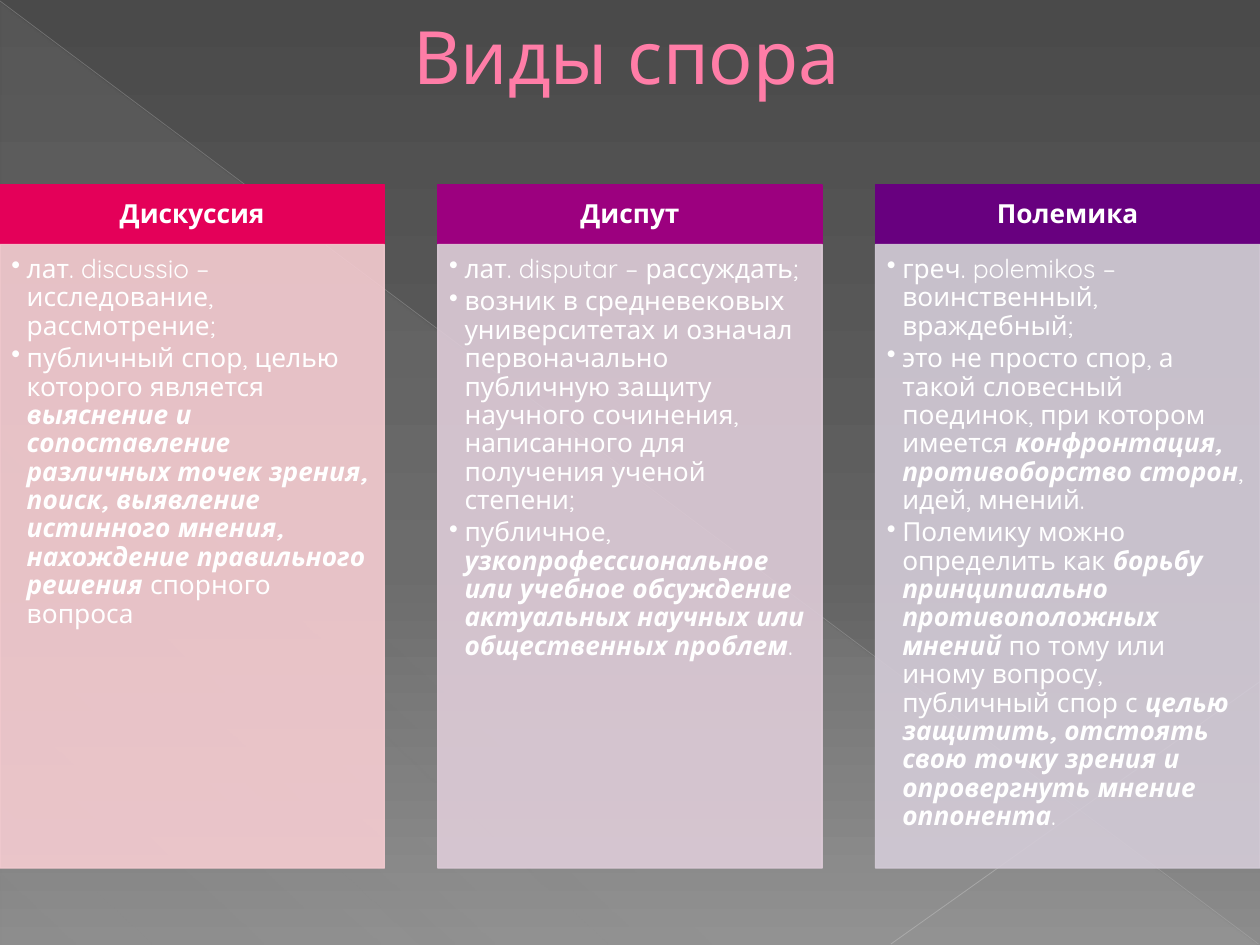
from lxml.etree import SubElement
from pptx import Presentation
from pptx.dml.color import RGBColor
from pptx.enum.shapes import MSO_CONNECTOR, MSO_SHAPE
from pptx.enum.text import MSO_ANCHOR, MSO_AUTO_SIZE, PP_ALIGN
from pptx.oxml.ns import qn
from pptx.util import Cm, Pt

WHITE = RGBColor(0xFF, 0xFF, 0xFF)
PINK = RGBColor(0xFF, 0x7D, 0xA7)
PINK_EDGE = RGBColor(0xB1, 0x27, 0x61)
BG_TOP = RGBColor(0x4A, 0x4A, 0x4A)
BG_MIDDLE = RGBColor(0x62, 0x62, 0x62)
BG_BOTTOM = RGBColor(0x8C, 0x8C, 0x8C)
SHEEN = RGBColor(0xD2, 0xD2, 0xD2)
LONG_RAY = RGBColor(0xBF, 0xBF, 0xBF)
SHORT_RAY = RGBColor(0xC6, 0xC6, 0xC6)
RED = RGBColor(0xE4, 0x00, 0x59)
MAGENTA = RGBColor(0x9C, 0x00, 0x7F)
PURPLE = RGBColor(0x68, 0x00, 0x7F)
PALE_RED = RGBColor(0xF5, 0xCC, 0xD1)
PALE_MAGENTA = RGBColor(0xDE, 0xCC, 0xD8)
PALE_PURPLE = RGBColor(0xD4, 0xCC, 0xD8)

WIDTH, HEIGHT = 25.4, 19.05
COLUMN_WIDTH = 7.75
HEAD_TOP, HEAD_HEIGHT, BODY_HEIGHT = 3.73, 1.2, 12.57

COLUMNS = [
    ("Дискуссия", RED, PALE_RED, [
        [("лат. discussio – исследование, рассмотрение;", False)],
        [("публичный спор, целью которого является ", False),
         ("выяснение и сопоставление различных точек зрения, поиск, выявление "
          "истинного мнения, нахождение правильного решения", True),
         (" спорного вопроса", False)],
    ]),
    ("Диспут", MAGENTA, PALE_MAGENTA, [
        [("лат. disputar – рассуждать;", False)],
        [("возник в средневековых университетах и означал первоначально публичную "
          "защиту научного сочинения, написанного для получения ученой степени;", False)],
        [("публичное, ", False),
         ("узкопрофессиональное или учебное обсуждение актуальных научных или "
          "общественных проблем", True),
         (".", False)],
    ]),
    ("Полемика", PURPLE, PALE_PURPLE, [
        [("греч. polemikos – воинственный, враждебный;", False)],
        [("это не просто спор, а такой словесный поединок, при котором имеется ", False),
         ("конфронтация, противоборство сторон", True),
         (", идей, мнений.", False)],
        [("Полемику можно определить как ", False),
         ("борьбу принципиально противоположных мнений", True),
         (" по тому или иному вопросу, публичный спор с ", False),
         ("целью защитить, отстоять свою точку зрения и опровергнуть мнение "
          "оппонента", True),
         (".", False)],
    ]),
]


class SlideBuilder:
    """Draws styled elements on the current slide."""

    font = "Quicksand"
    text_size = 15

    def __init__(self, slide):
        self.s = slide

    def alpha(self, owner, percent):
        for color in owner.iter(qn("a:srgbClr")):
            SubElement(color, qn("a:alpha"), val=str(percent * 1000))

    def gradient(self, fill, owner, stops, angle):
        fill.gradient()
        grad = owner.find(".//" + qn("a:gradFill"))
        grad.clear()
        stop_list = SubElement(grad, qn("a:gsLst"))
        for pos, color, opacity in stops:
            gs = SubElement(stop_list, qn("a:gs"), pos=str(pos * 1000))
            SubElement(gs, qn("a:srgbClr"), val=str(color))
            self.alpha(gs, opacity)
        SubElement(grad, qn("a:lin"), ang=str(angle * 60000), scaled="0")

    def background(self, stops, angle):
        self.gradient(self.s.background.fill, self.s.element, stops, angle)

    def shape(self, kind, left, top, width, height):
        sp = self.s.shapes.add_shape(kind, Cm(left), Cm(top), Cm(width), Cm(height))
        sp.shadow.inherit = False
        return sp

    def sheen(self, stops, angle):
        sp = self.shape(MSO_SHAPE.RIGHT_TRIANGLE, 0.02, 0.05, 25.35, 19)
        self.gradient(sp.fill, sp.element, stops, angle)
        sp.line.fill.background()

    def ray(self, x1, y1, x2, y2, color, width, opacity):
        line = self.s.shapes.add_connector(
            MSO_CONNECTOR.STRAIGHT, Cm(x1), Cm(y1), Cm(x2), Cm(y2))
        line.line.color.rgb = color
        line.line.width = Pt(width)
        sp_pr = line.element.spPr
        self.alpha(sp_pr, opacity)
        SubElement(sp_pr, qn("a:effectLst"))

    def run(self, p, text, size, color, bold=False, italic=False):
        r = p.add_run()
        r.text = text
        r.font.name = self.font
        r.font.size = Pt(size)
        r.font.color.rgb = color
        r.font.bold = bold
        r.font.italic = italic
        return r

    def title(self, text):
        sp = self.s.shapes.title
        sp.left, sp.top, sp.width, sp.height = Cm(1.2), Cm(0), Cm(22.86), Cm(2.24)
        tf = sp.text_frame
        tf.auto_size = MSO_AUTO_SIZE.NONE
        tf.vertical_anchor = MSO_ANCHOR.MIDDLE
        p = tf.paragraphs[0]
        p.alignment = PP_ALIGN.CENTER
        r = self.run(p, text, 42, PINK)
        r_pr = r.font._element
        ln = SubElement(r_pr, qn("a:ln"), w=str(Pt(0.5)))
        SubElement(SubElement(ln, qn("a:solidFill")), qn("a:srgbClr"), val=str(PINK_EDGE))
        r_pr.insert(0, ln)

    def panel(self, left, top, height, color, opacity, margins, anchor):
        sp = self.shape(MSO_SHAPE.RECTANGLE, left, top, COLUMN_WIDTH, height)
        sp.fill.solid()
        sp.fill.fore_color.rgb = color
        sp.line.color.rgb = color
        sp.line.width = Pt(0.75)
        self.alpha(sp.element.spPr, opacity)
        tf = sp.text_frame
        tf.word_wrap = True
        tf.vertical_anchor = anchor
        tf.margin_left, tf.margin_top, tf.margin_right, tf.margin_bottom = map(Cm, margins)
        return tf

    def heading(self, left, text, color):
        tf = self.panel(left, HEAD_TOP, HEAD_HEIGHT, color, 100,
                        (0.3, 0.17, 0.3, 0.17), MSO_ANCHOR.MIDDLE)
        p = tf.paragraphs[0]
        p.alignment = PP_ALIGN.CENTER
        p.line_spacing = 0.9
        self.run(p, text, self.text_size, WHITE, bold=True)

    def bullets(self, left, items, color):
        tf = self.panel(left, HEAD_TOP + HEAD_HEIGHT, BODY_HEIGHT, color, 90,
                        (0.23, 0.23, 0.3, 0.33), MSO_ANCHOR.TOP)
        for i, item in enumerate(items):
            p = tf.add_paragraph() if i else tf.paragraphs[0]
            p.level = 1
            p.alignment = PP_ALIGN.LEFT
            p.line_spacing = 0.9
            p.space_after = Pt(2.25)
            p_pr = p._p.get_or_add_pPr()
            p_pr.set("marL", str(Cm(0.31)))
            p_pr.set("indent", str(Cm(-0.31)))
            SubElement(p_pr, qn("a:buChar"), char="•")
            for text, strong in item:
                self.run(p, text, self.text_size, WHITE, strong, strong)


def main():
    prs = Presentation()
    prs.slide_width, prs.slide_height = Cm(WIDTH), Cm(HEIGHT)
    builder = SlideBuilder(prs.slides.add_slide(prs.slide_layouts[5]))
    builder.background(
        [(0, BG_TOP, 100), (60, BG_MIDDLE, 100), (100, BG_BOTTOM, 100)], 90)
    builder.sheen([(0, SHEEN, 10), (70, SHEEN, 8), (100, SHEEN, 1)], 133)
    builder.ray(0, 0.02, 25.37, 19.03, LONG_RAY, 0.39, 35)
    builder.ray(WIDTH, 13.74, 17.96, 19.03, SHORT_RAY, 0.47, 45)
    builder.title("Виды спора")
    step = (WIDTH - COLUMN_WIDTH) / (len(COLUMNS) - 1)
    for i, (name, color, pale, items) in enumerate(COLUMNS):
        builder.heading(i * step, name, color)
        builder.bullets(i * step, items, pale)
    prs.save("out.pptx")


if __name__ == "__main__":
    main()
